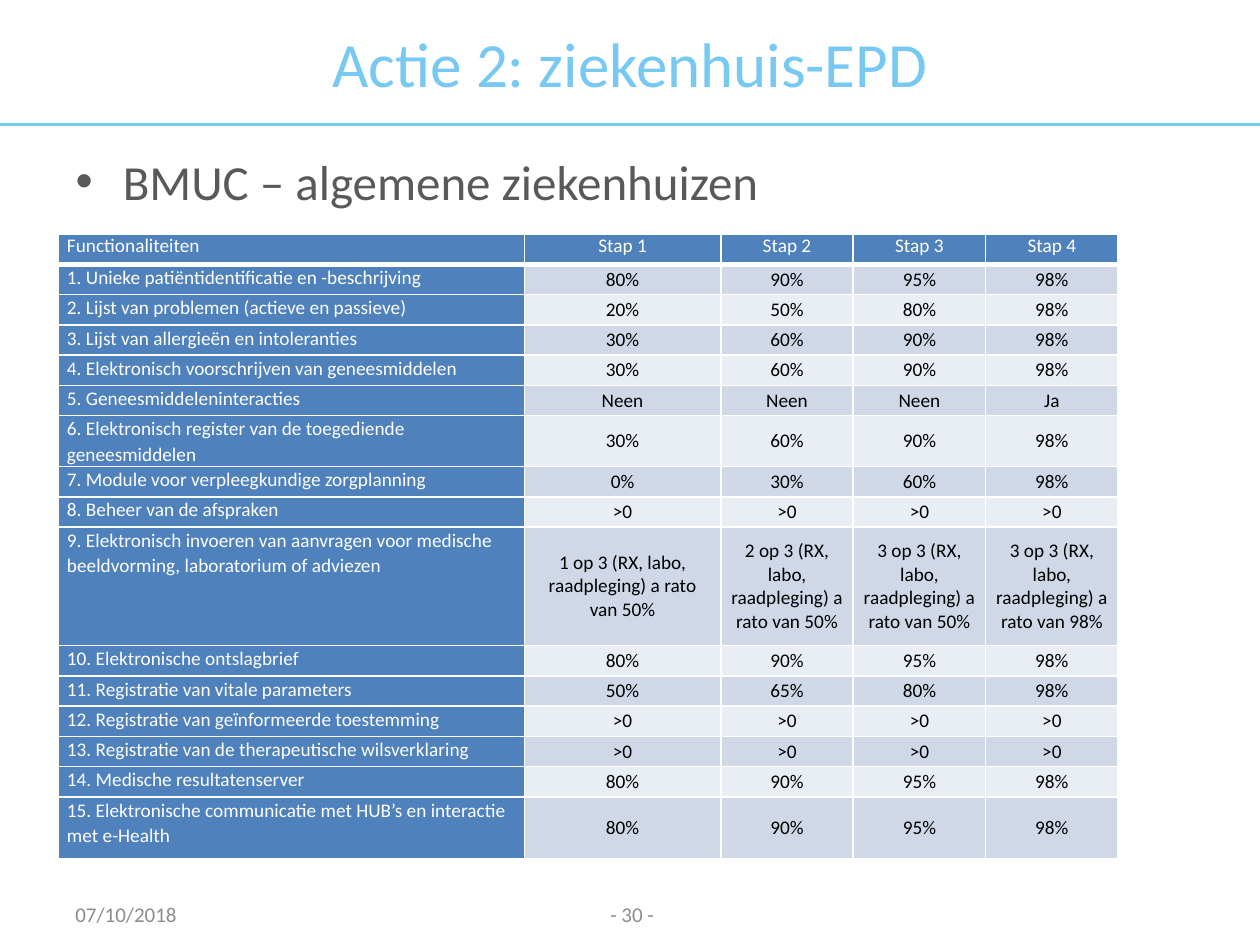
from lxml.etree import SubElement
from pptx import Presentation
from pptx.dml.color import RGBColor
from pptx.enum.shapes import MSO_CONNECTOR as Connector
from pptx.enum.text import MSO_ANCHOR as Anchor, PP_ALIGN as Align
from pptx.oxml.ns import qn
from pptx.util import Cm, Pt

STEPS = ["Stap 1", "Stap 2", "Stap 3", "Stap 4"]
SHARES = ["80%", "90%", "95%", "98%"]
ABOVE_ZERO = [">0"] * 4
ORDERS = [f"{count} op 3 (RX, labo, raadpleging) a rato van {share}%"
          for count, share in [(1, 50), (2, 50), (3, 50), (3, 98)]]
FUNCTIONS = [
    ("Unieke patiëntidentificatie en -beschrijving", SHARES),
    ("Lijst van problemen (actieve en passieve)", ["20%", "50%", "80%", "98%"]),
    ("Lijst van allergieën en intoleranties", ["30%", "60%", "90%", "98%"]),
    ("Elektronisch voorschrijven van geneesmiddelen", ["30%", "60%", "90%", "98%"]),
    ("Geneesmiddeleninteracties", ["Neen", "Neen", "Neen", "Ja"]),
    ("Elektronisch register van de toegediende geneesmiddelen", ["30%", "60%", "90%", "98%"]),
    ("Module voor verpleegkundige zorgplanning", ["0%", "30%", "60%", "98%"]),
    ("Beheer van de afspraken", ABOVE_ZERO),
    ("Elektronisch invoeren van aanvragen voor medische beeldvorming, "
     "laboratorium of adviezen", ORDERS),
    ("Elektronische ontslagbrief", SHARES),
    ("Registratie van vitale parameters", ["50%", "65%", "80%", "98%"]),
    ("Registratie van geïnformeerde toestemming", ABOVE_ZERO),
    ("Registratie van de therapeutische wilsverklaring", ABOVE_ZERO),
    ("Medische resultatenserver", SHARES),
    ("Elektronische communicatie met HUB’s en interactie met e-Health", SHARES),
]
COLUMN_WIDTHS = [9.4, 3.96, 2.67, 2.67, 2.67]
ROW_HEIGHT = 0.61
TALL_ROWS = {9: 2.39, 15: 1.24}


def color(value):
    return RGBColor.from_string(value)


def apply(target, values):
    for name, value in values.items():
        setattr(target, name, value)


class SlideBuilder:
    """Hold the style and the current slide, and add each kind of element."""

    font = "Calibri"
    sky, blue, white, black = "77C9F2", "4F81BD", "FFFFFF", "000000"
    dark_gray, gray = "595959", "8C8C8C"
    bands = ["E9EDF4", "D0D8E8"]

    def __init__(self, deck):
        self.page = deck.slides.add_slide(deck.slide_layouts[1])

    def add_text(self, frame, text, size, fill, **layout):
        para = frame.paragraphs[0]
        apply(para, layout)
        span = para.add_run()
        apply(span, {"text": text})
        apply(span.font, {"name": self.font, "size": Pt(size), "bold": False})
        span.font.color.rgb = color(fill)

    def placeholder(self, index, text, area, size, fill, anchor, **layout):
        box = self.page.placeholders[index]
        apply(box, dict(zip(["left", "top", "width", "height"], map(Cm, area))))
        box.text_frame.vertical_anchor = anchor
        self.add_text(box.text_frame, text, size, fill, **layout)

    def footer(self, text, left, align):
        box = self.page.shapes.add_textbox(Cm(left), Cm(17.92), Cm(5.93), Cm(1.01))
        apply(box.text_frame, {"word_wrap": True, "vertical_anchor": Anchor.MIDDLE})
        self.add_text(box.text_frame, text, 12, self.gray, alignment=align)

    def rule(self, top, width):
        line = self.page.shapes.add_connector(Connector.STRAIGHT, 0, Cm(top), Cm(width), Cm(top))
        line.line.color.rgb = color(self.sky)
        line.line.width = Pt(1.5)
        SubElement(line._element.spPr, qn("a:effectLst"))

    def borders(self, cell, bottom):
        properties = cell._tc.get_or_add_tcPr()
        for side, width in {"L": 1, "R": 1, "T": 1, "B": bottom}.items():
            edge = SubElement(properties, qn(f"a:ln{side}"), w=str(Pt(width)))
            paint = SubElement(edge, qn("a:solidFill"))
            SubElement(paint, qn("a:srgbClr"), val=self.white)

    def cell(self, cell, text, row, column):
        heading = row == 0 or column == 0
        self.borders(cell, 3 if row == 0 else 1)
        cell.fill.solid()
        cell.fill.fore_color.rgb = color(self.blue if heading else self.bands[row % 2])
        apply(cell, {"margin_left": Cm(0.18), "margin_right": Cm(0.18),
                     "margin_top": 0, "margin_bottom": 0,
                     "vertical_anchor": Anchor.TOP if heading else Anchor.MIDDLE})
        layout = {"alignment": Align.CENTER if column else Align.LEFT, "space_after": Pt(2)}
        if row and not column:
            layout["line_spacing"] = 1.07
        self.add_text(cell.text_frame, text, 11, self.white if heading else self.black, **layout)

    def table(self, rows, left, top):
        heights = [TALL_ROWS.get(row, ROW_HEIGHT) for row in range(len(rows))]
        table = self.page.shapes.add_table(
            len(rows), len(COLUMN_WIDTHS), Cm(left), Cm(top),
            Cm(sum(COLUMN_WIDTHS)), Cm(sum(heights))).table
        apply(table, {"first_row": False, "horz_banding": False})
        for column, width in zip(table.columns, COLUMN_WIDTHS):
            column.width = Cm(width)
        for row, texts in enumerate(rows):
            table.rows[row].height = Cm(heights[row])
            for column, text in enumerate(texts):
                self.cell(table.cell(row, column), text, row, column)


def main():
    deck = Presentation()
    apply(deck, {"slide_width": Cm(25.4), "slide_height": Cm(19.05)})
    slide = SlideBuilder(deck)
    slide.rule(2.51, 25.4)
    slide.placeholder(0, "Actie 2: ziekenhuis-EPD", (0, 0, 25.4, 2.51), 36,
                      slide.sky, Anchor.MIDDLE, alignment=Align.CENTER)
    slide.placeholder(1, "BMUC – algemene ziekenhuizen", (1.27, 2.92, 22.86, 14.6), 28,
                      slide.dark_gray, Anchor.TOP, space_before=Pt(0))
    rows = [["Functionaliteiten", *STEPS]]
    rows += [[f"{number}. {name}", *values]
             for number, (name, values) in enumerate(FUNCTIONS, 1)]
    slide.table(rows, 1.17, 4.72)
    slide.footer("07/10/2018", 1.27, Align.LEFT)
    slide.footer("- 30 -", 9.78, Align.CENTER)
    deck.save("out.pptx")


if __name__ == "__main__":
    main()
